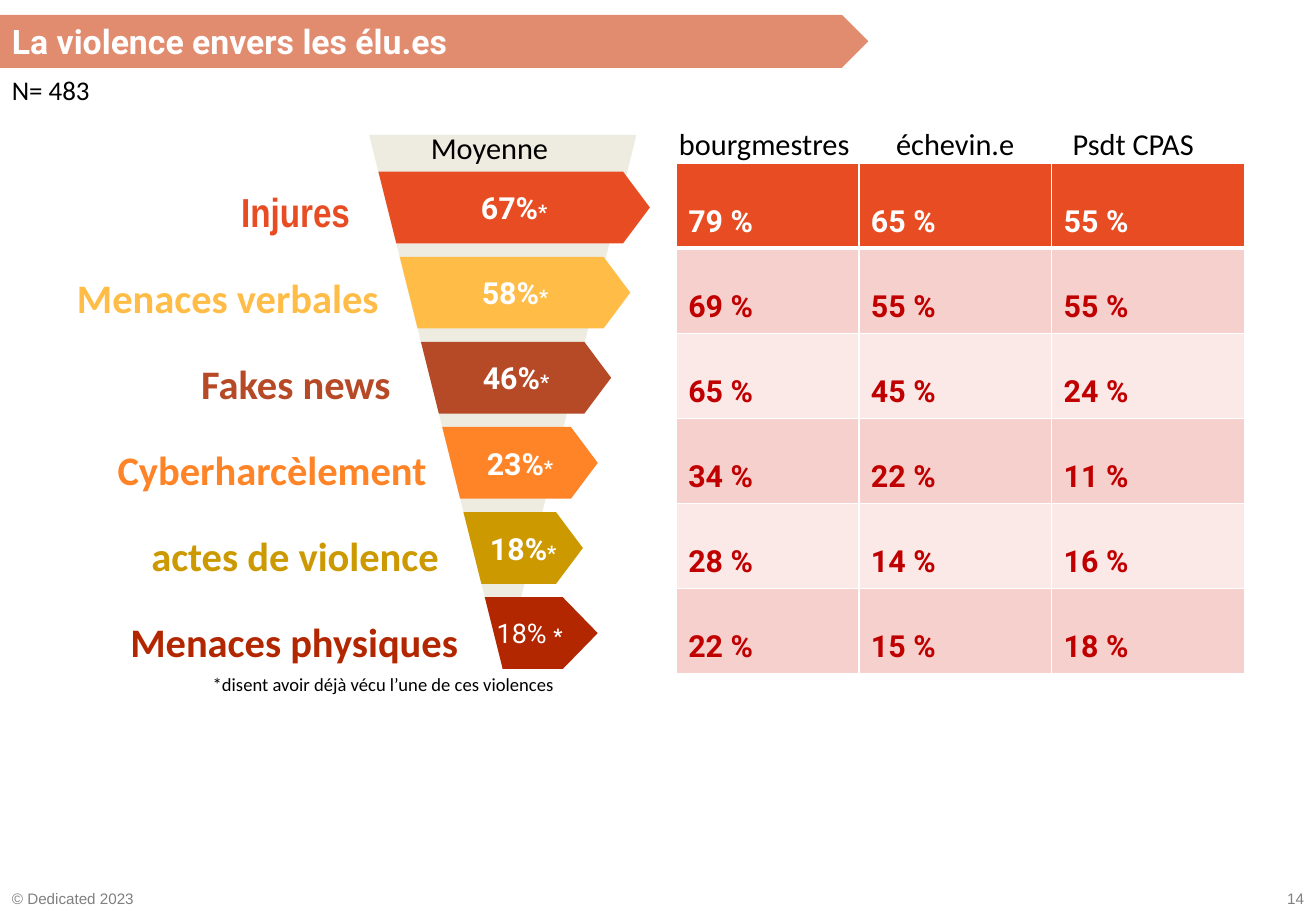
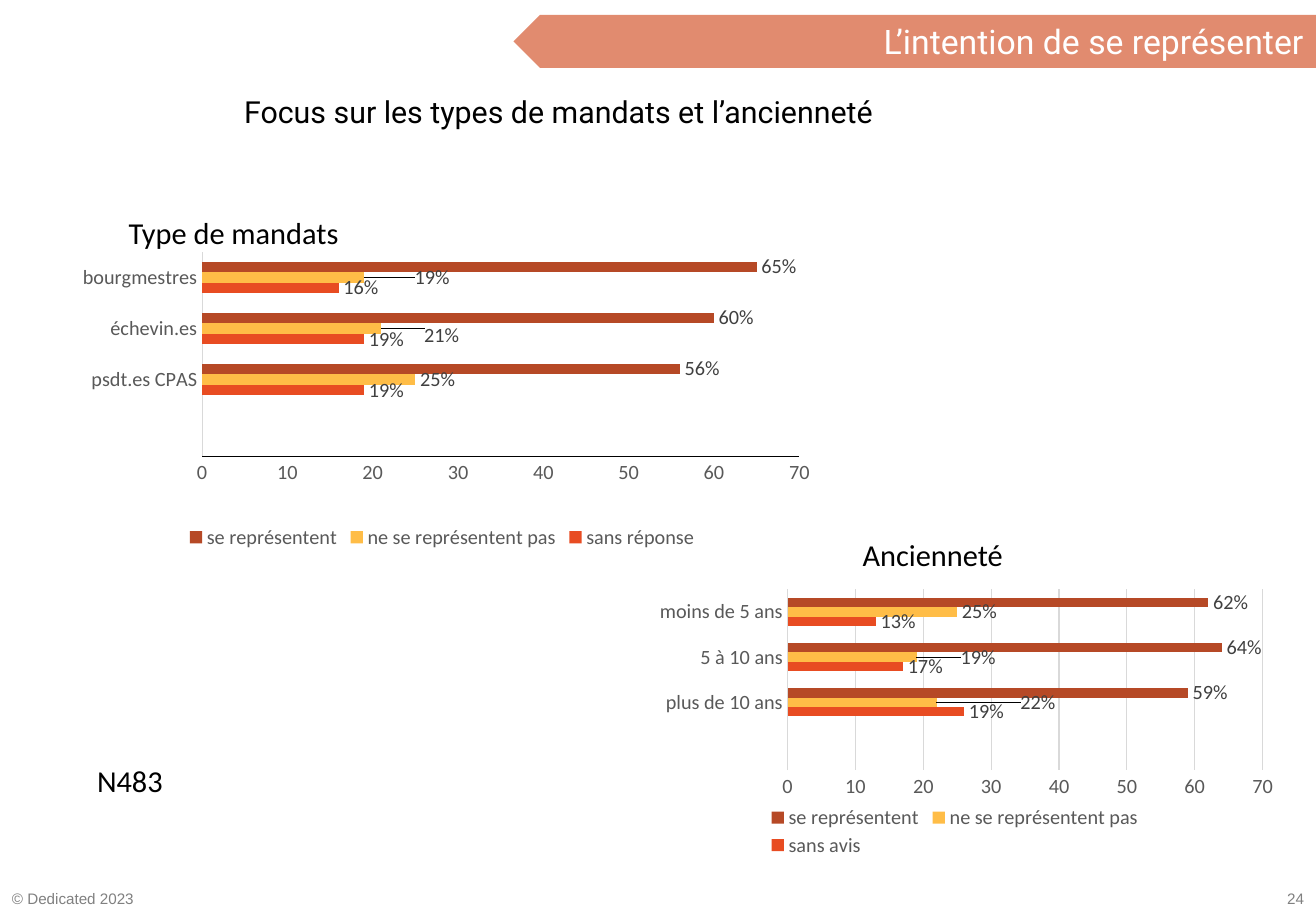
from pptx import Presentation
from pptx.chart.data import CategoryChartData
from pptx.dml.color import RGBColor
from pptx.enum.chart import XL_CHART_TYPE, XL_LABEL_POSITION, XL_LEGEND_POSITION, XL_TICK_MARK
from pptx.enum.shapes import MSO_SHAPE
from pptx.enum.text import MSO_ANCHOR, PP_ALIGN
from pptx.oxml import parse_xml
from pptx.oxml.ns import nsdecls, qn
from pptx.util import Cm, Pt

WIDE, HIGH = 27.52, 19.05
BAND, WHITE, BLACK, GREY = "E18B6F", "FFFFFF", "000000", "595959"
RED, GOLD, BROWN, PALE = "E84C22", "FFBD47", "B64926", "D9D9D9"
LEFT, RIGHT, MID = PP_ALIGN.LEFT, PP_ALIGN.RIGHT, PP_ALIGN.CENTER


def hue(code):
    """Turn a hex string into a colour."""
    return RGBColor.from_string(code)


def style(font, size, face, color, bold=False):
    """Set the look of a font."""
    font.size, font.name, font.bold = Pt(size), face, bold
    font.color.rgb = hue(color)


def write(shape, words, size=18, face="Calibri", color=BLACK, bold=False,
          align=LEFT, anchor=MSO_ANCHOR.TOP):
    """Put one styled paragraph in a shape or cell and return it."""
    frame = shape.text_frame
    frame.word_wrap = True
    frame.vertical_anchor = anchor
    para = frame.paragraphs[0]
    para.text, para.alignment = words, align
    style(para.font, size, face, color, bold)
    return para


def text(slide, left, top, width, height, words, **look):
    """Add a text box."""
    box = slide.shapes.add_textbox(Cm(left), Cm(top), Cm(width), Cm(height))
    write(box, words, **look)


def paint(shape, fill):
    """Give a shape a flat fill, or none, without line or shadow."""
    shape.shadow.inherit = False
    shape.line.fill.background()
    if fill:
        shape.fill.solid()
        shape.fill.fore_color.rgb = hue(fill)
    else:
        shape.fill.background()


def block(slide, kind, left, top, width, height, fill=None):
    """Add a plain preset shape."""
    shape = slide.shapes.add_shape(kind, Cm(left), Cm(top), Cm(width), Cm(height))
    paint(shape, fill)
    return shape


def outline(slide, fill, *dots):
    """Add a closed shape through the given points."""
    dots = [(Cm(x), Cm(y)) for x, y in dots]
    maker = slide.shapes.build_freeform(*dots[0], scale=1.0)
    maker.add_line_segments(dots[1:], close=True)
    shape = maker.convert_to_shape()
    paint(shape, fill)
    return shape


def page(deck, title, width, number, flip=False):
    """Start a slide with its title band and footer."""
    slide = deck.slides.add_slide(deck.slide_layouts[6])
    text(slide, 0, 18.48, 4, 0.64, "© Dedicated 2023", size=9, face="Arial", color="808080")
    text(slide, WIDE - 1.7, 18.48, 1.7, 0.64, number, size=9, face="Arial",
         color="808080", align=RIGHT)
    left = WIDE - width if flip else 0
    band = block(slide, MSO_SHAPE.PENTAGON, left, 0.31, width, 1.11, BAND)
    if flip:
        band._element.spPr.find(qn("a:xfrm")).set("flipH", "1")
    write(band, title, 20, "Roboto", WHITE, not flip, RIGHT if flip else LEFT)
    return slide


def funnel(slide, rows):
    """Draw the funnel, its arrow bars and their labels."""
    left, top, foot = 7.72, 2.82, 14.01
    outline(slide, "EEECE1", (13.31, top), (left, top), (10.52, foot))
    slope, tall = 0.25, 1.5
    for spot, (name, face, color, edge, share, tip, head) in enumerate(rows):
        last = spot == len(rows) - 1
        high = 3.59 + 1.78 * spot
        low = high + tall
        bar = outline(slide, color, (left + slope * (high - top), high),
                      (left + slope * (low - top), low), (tip - head, low),
                      (tip, high + tall / 2), (tip - head, high))
        para = write(bar, share, 16 if last else 18, "Roboto", WHITE, not last,
                     LEFT if last else MID, MSO_ANCHOR.MIDDLE)
        star = para.add_run()
        star.text = "*"
        star.font.size, star.font.bold = Pt(12), True
        text(slide, edge - 7.8, 3.91 + 1.8 * spot, 7.8, 1, name, size=24, face=face,
             color=color, bold=True, align=RIGHT, anchor=MSO_ANCHOR.MIDDLE)


def edge(cell, side, width):
    """Draw one white cell border."""
    cell._tc.get_or_add_tcPr().append(parse_xml(
        f'<a:ln{side} {nsdecls("a")} w="{Pt(width)}"><a:solidFill>'
        f'<a:srgbClr val="{WHITE}"/></a:solidFill></a:ln{side}>'))


def grid(slide, left, top, widths, tall, rows):
    """Add the table of shares."""
    frame = slide.shapes.add_table(len(rows), len(widths), Cm(left), Cm(top),
                                   Cm(sum(widths)), Cm(tall * len(rows)))
    table = frame.table
    table.first_row = table.horz_banding = False
    for col, width in zip(table.columns, widths):
        col.width = Cm(width)
    for y, row in enumerate(rows):
        table.rows[y].height = Cm(tall)
        fill = RED if y == 0 else ("FBE9E8", "F6D0CD")[y % 2]
        for x, share in enumerate(row):
            cell = table.cell(y, x)
            for side in "LRTB":
                edge(cell, side, 3 if (y, side) in ((0, "B"), (1, "T")) else 1)
            cell.fill.solid()
            cell.fill.fore_color.rgb = hue(fill)
            write(cell, f"{share} %", 18, "Roboto", "C00000" if y else WHITE, True)
            cell.vertical_anchor = MSO_ANCHOR.BOTTOM
            cell.margin_bottom = Cm(0.18)


def place(parent, **marks):
    """Set a manual chart layout near the start of a part."""
    for old in parent.findall(qn("c:layout")):
        parent.remove(old)
    tags = "".join(f'<c:{tag} val="{val}"/>' for tag, val in marks.items())
    node = parse_xml(f'<c:layout {nsdecls("c")}><c:manualLayout>{tags}'
                     '</c:manualLayout></c:layout>')
    parent.insert(0 if parent.tag == qn("c:plotArea") else 1, node)


def frame(x, y, w, h):
    """Name the parts of a layout fixed to the chart edges."""
    return dict(xMode="edge", yMode="edge", x=x, y=y, w=w, h=h)


def tag(point, words, shift):
    """Label one bar, moved by a share of the chart size."""
    label = point.data_label
    body = label.text_frame
    run = body.paragraphs[0].add_run()
    run.text = words
    style(run.font, 12, "Calibri", "404040")
    label.position = XL_LABEL_POSITION.OUTSIDE_END
    if shift:
        place(body._element.getparent().getparent(), x=shift[0], y=shift[1])


def unlead(part):
    """Turn off the leader lines of a series."""
    part.data_labels._element.append(parse_xml(
        f'<c:extLst {nsdecls("c")}><c:ext uri="{{CE6537A1-D6FC-4f65-9D91-7224C49458BB}}" '
        'xmlns:c15="http://schemas.microsoft.com/office/drawing/2012/chart">'
        '<c15:showLeaderLines val="0"/></c:ext></c:extLst>'))


def bars(slide, spot, names, rows, gap, plot, base=None, lines=False, key=None,
         shifts=None, notes=None):
    """Add a clustered bar chart with hand-set labels."""
    data = CategoryChartData()
    data.categories = ["", *names]
    for name, vals in rows:
        data.add_series(name, [None, *vals])
    chart = slide.shapes.add_chart(XL_CHART_TYPE.BAR_CLUSTERED, *map(Cm, spot), data).chart
    chart.has_title = False
    style(chart.font, 10, "Calibri", BLACK)
    chart.has_legend = True
    legend = chart.legend
    legend.position, legend.include_layout = XL_LEGEND_POSITION.BOTTOM, False
    style(legend.font, 12, "Calibri", GREY)
    if key:
        place(legend._element, **frame(*key))
    area = chart._chartSpace.find(".//" + qn("c:plotArea"))
    place(area, layoutTarget="inner", **frame(*plot))
    scale = chart.value_axis
    scale.minimum_scale, scale.maximum_scale, scale.major_unit = 0, 70, 10
    scale.has_major_gridlines = lines
    if lines:
        rule = scale.major_gridlines.format.line
        rule.color.rgb, rule.width = hue(PALE), Pt(0.75)
    for axis, color in ((chart.category_axis, PALE), (scale, base)):
        axis.major_tick_mark = axis.minor_tick_mark = XL_TICK_MARK.NONE
        style(axis.tick_labels.font, 12, "Calibri", GREY)
        line = axis.format.line
        if color:
            line.color.rgb, line.width = hue(color), Pt(0.75)
        else:
            line.fill.background()
    body = chart.plots[0]
    body.gap_width, body.vary_by_categories = gap, False
    for y, (part, color) in enumerate(zip(body.series, (RED, GOLD, BROWN))):
        part.format.fill.solid()
        part.format.fill.fore_color.rgb = hue(color)
        for x, val in enumerate(rows[y][1]):
            words = (notes or {}).get((y, x), f"{val}%")
            tag(part.points[x + 1], words, (shifts or {}).get((y, x)))
        unlead(part)


def harm(deck):
    """Build the slide on violence."""
    slide = page(deck, "La violence envers les élu.es", 18.16, "14")
    text(slide, 0, 1.42, 4.62, 0.94, "N= 483", size=16)
    funnel(slide, [
        ("Injures", "Arial Narrow", RED, 7.57, "67%", 13.59, 0.56),
        ("Menaces verbales", "Calibri", GOLD, 8.17, "58%", 13.18, 0.56),
        ("Fakes news", "Calibri", BROWN, 8.42, "46%", 12.78, 0.56),
        ("Cyberharcèlement", "Calibri", "FF8427", 9.17, "23%", 12.5, 0.56),
        ("actes de violence", "Calibri", "CC9900", 9.43, "18%", 12.19, 0.56),
        ("Menaces physiques", "Calibri", "B22600", 9.83, "18% ", 12.5, 0.73),
    ])
    text(slide, 4.2, 13.95, 8.94, 0.73, "*disent avoir déjà vécu l’une de ces violences", size=11)
    grid(slide, 14.14, 3.41, (3.82, 4.03, 4.03), 1.78, [
        (79, 65, 55), (69, 55, 55), (65, 45, 24), (34, 22, 11), (28, 14, 16), (22, 15, 18)])
    text(slide, 8.76, 2.58, 3.43, 1.02, "Moyenne")
    for left, width, name in ((13.95, 4.2, "bourgmestres"), (18.49, 3.23, "échevin.e"),
                              (22.18, 3.48, "Psdt CPAS")):
        text(slide, left, 2.5, width, 1.02, name)


def intent(deck):
    """Build the slide on standing again."""
    slide = page(deck, "L’intention de se représenter", 16.78, "24", True)
    focus = block(slide, MSO_SHAPE.ROUNDED_RECTANGLE, 4.8, 1.76, 22.05, 1.14)
    focus.line.color.rgb, focus.line.width = hue(WHITE), Pt(1)
    write(focus, "Focus sur les types de mandats et l’ancienneté", face="Roboto")
    bars(slide, (1.28, 4.35, 15.93, 7.24), ("psdt.es CPAS", "échevin.es", "bourgmestres"),
         [("sans réponse", (19, 19, 16)), ("ne se représentent pas", (25, 21, 19)),
          ("se représentent", (56, 60, 65))],
         183, (0.185, 0.127, 0.784, 0.59), base=BLACK,
         shifts={(1, 1): (0.05, 0.02), (1, 2): (0.06, 0)})
    bars(slide, (13.11, 11.94, 13.72, 6.12), ("plus de 10 ans", "5 à 10 ans", "moins de 5 ans"),
         [("sans avis", (26, 17, 13)), ("ne se représentent pas", (22, 19, 25)),
          ("se représentent", (59, 64, 62))],
         182, (0.245, 0.063, 0.724, 0.618), lines=True, key=(0.21, 0.79, 0.58, 0.2),
         shifts={(1, 0): (0.12, 0), (1, 1): (0.06, 0)}, notes={(0, 0): "19%"})
    text(slide, 2.44, 4.35, 5.77, 1.02, "Type de mandats")
    text(slide, 17.79, 11.08, 5.77, 1.02, "Ancienneté")
    text(slide, 1.78, 15.81, 2.82, 1.02, "N483")


def main():
    """Build and save the deck."""
    deck = Presentation()
    deck.slide_width, deck.slide_height = Cm(WIDE), Cm(HIGH)
    harm(deck)
    intent(deck)
    deck.save("out.pptx")


if __name__ == "__main__":
    main()
